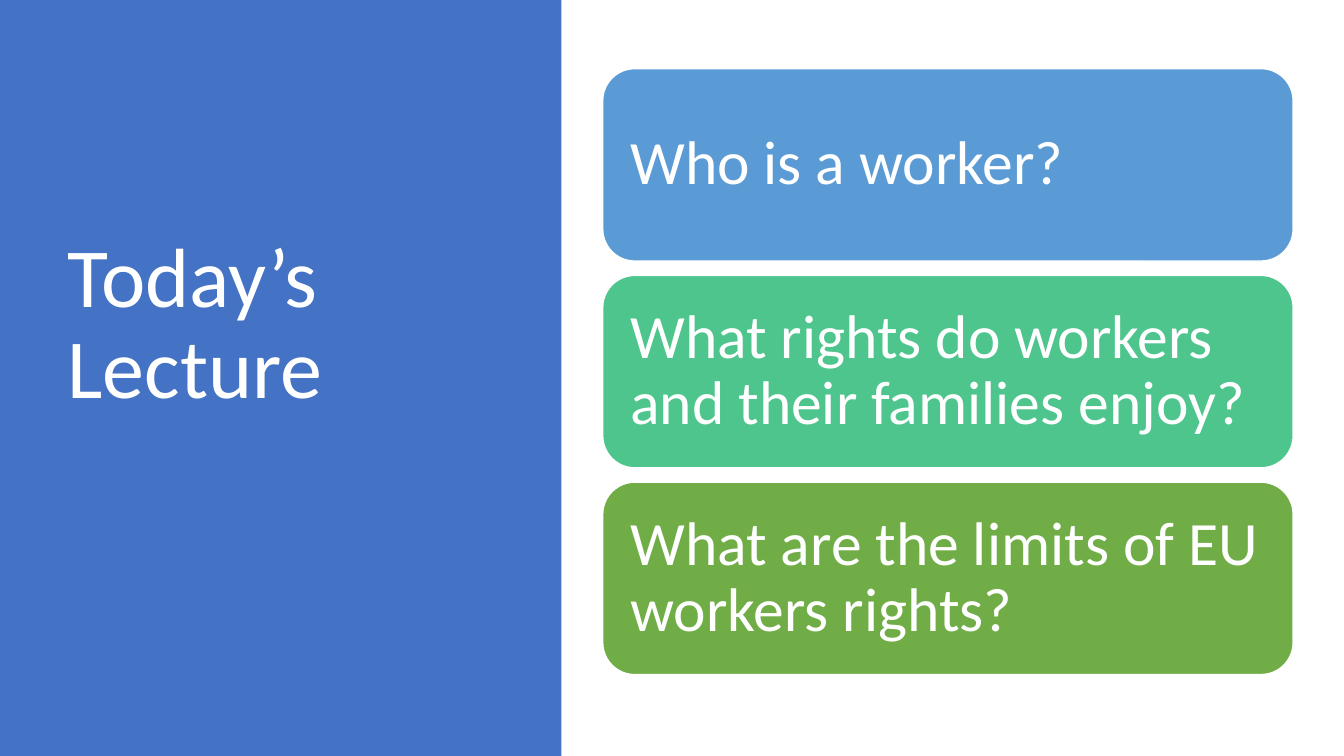
from pptx import Presentation
from pptx.dml.color import RGBColor
from pptx.enum.shapes import MSO_SHAPE
from pptx.enum.text import MSO_ANCHOR, MSO_AUTO_SIZE, PP_ALIGN
from pptx.util import Cm, Pt

WHITE = RGBColor(0xFF, 0xFF, 0xFF)
NAVY_BLUE = RGBColor(0x44, 0x72, 0xC4)
SKY_BLUE = RGBColor(0x5B, 0x9B, 0xD5)
MINT = RGBColor(0x4D, 0xC5, 0x8D)
GREEN = RGBColor(0x70, 0xAD, 0x47)

QUESTIONS = [
    ("Who is a worker?", SKY_BLUE),
    ("What rights do workers and their families enjoy?", MINT),
    ("What are the limits of EU workers rights?", GREEN),
]


def write_text(sp, text, size):
    """Write one left-aligned white paragraph, centred vertically."""
    tf = sp.text_frame
    tf.text = text
    tf.word_wrap = True
    tf.auto_size = MSO_AUTO_SIZE.NONE
    tf.vertical_anchor = MSO_ANCHOR.MIDDLE
    p = tf.paragraphs[0]
    p.alignment = PP_ALIGN.LEFT
    p.line_spacing = 0.9
    font = p.runs[0].font
    font.name = "Calibri"
    font.size = Pt(size)
    font.color.rgb = WHITE


def add_title_panel(s, left, top, width, height):
    """Fill the box with a blue panel and set the slide title on it."""
    panel = s.shapes.add_shape(MSO_SHAPE.RECTANGLE, left, top, width, height)
    panel.shadow.inherit = False
    panel.fill.solid()
    panel.fill.fore_color.rgb = NAVY_BLUE
    panel.line.fill.background()

    title = s.shapes.title
    title.element.addprevious(panel.element)
    title.left, title.top = left + Cm(1.45), top + Cm(1.73)
    title.width, title.height = width - Cm(3.58), height - Cm(3.76)
    write_text(title, "Today’s Lecture", 60)
    title.text_frame.margin_bottom = Cm(2.44)


def add_question_cards(s, left, top, width, height, gap):
    """Stack equal rounded question cards in the box."""
    card_height = (height - gap * (len(QUESTIONS) - 1)) // len(QUESTIONS)
    for i, (question, color) in enumerate(QUESTIONS):
        card_top = top + i * (card_height + gap)
        card = s.shapes.add_shape(
            MSO_SHAPE.ROUNDED_RECTANGLE, left, card_top, width, card_height)
        card.shadow.inherit = False
        card.fill.solid()
        card.fill.fore_color.rgb = color
        card.line.color.rgb = WHITE
        card.line.width = Pt(1)
        write_text(card, question, 44)
        tf = card.text_frame
        tf.margin_left = tf.margin_right = Cm(0.46)
        tf.margin_top = tf.margin_bottom = Cm(0.46)


def main():
    """Build and save the lecture outline slide."""
    prs = Presentation()
    prs.slide_width, prs.slide_height = Cm(33.87), Cm(19.05)
    s = prs.slides.add_slide(prs.slide_layouts[5])
    add_title_panel(s, 0, 0, Cm(14.15), prs.slide_height)
    add_question_cards(s, Cm(15.19), Cm(1.73), Cm(17.4), Cm(15.27), Cm(0.36))
    prs.save("out.pptx")


if __name__ == "__main__":
    main()
